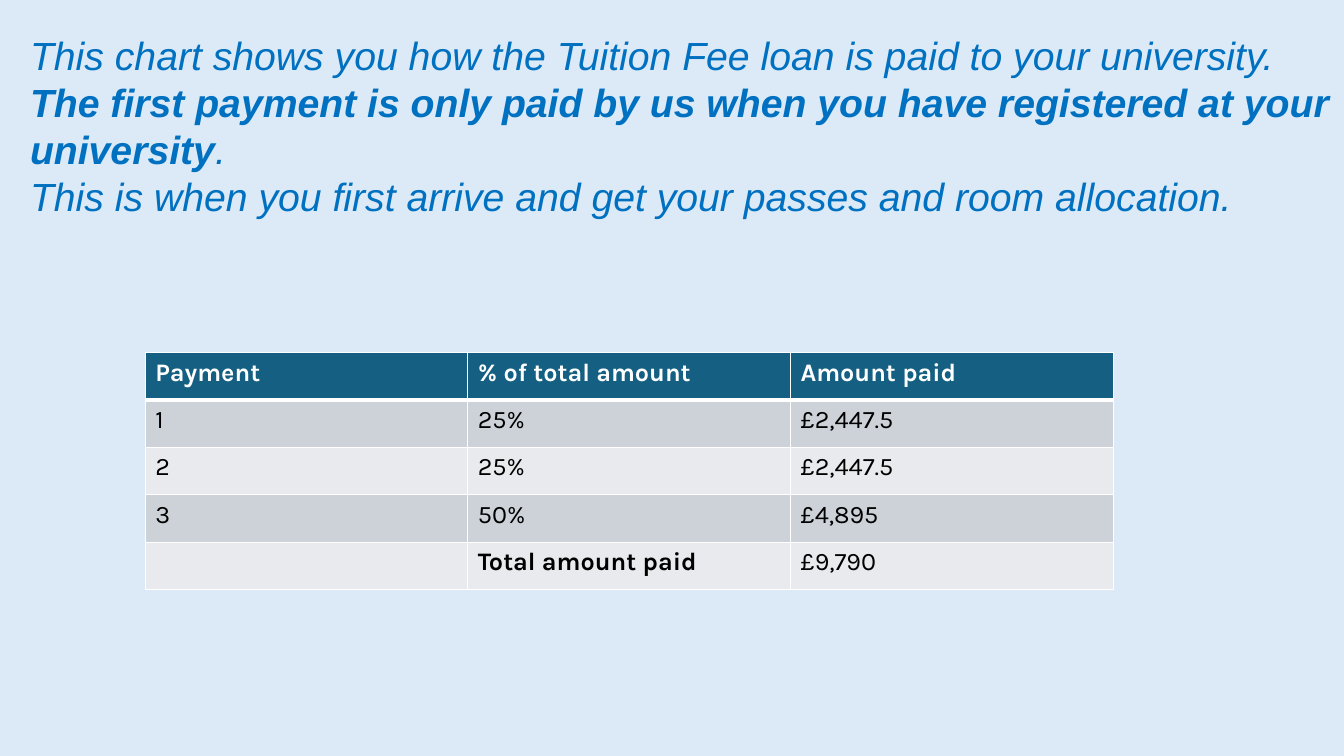
"""Build the slide on how the Tuition Fee loan is paid."""
from lxml.etree import SubElement
from pptx import Presentation
from pptx.dml.color import RGBColor
from pptx.oxml.ns import qn
from pptx.util import Inches, Pt

INTRODUCTION = [
    [("This chart shows you how the Tuition Fee loan is paid to your university.", False)],
    [("The first payment is only paid by us when you have registered at your university", True),
     (".", False)],
    [("This is when you first arrive and get your passes and room allocation.", False)],
]
PAYMENTS = [
    ("Payment", "% of total amount", "Amount paid"),
    ("1", "25%", "£2,447.5"),
    ("2", "25%", "£2,447.5"),
    ("3", "50%", "£4,895"),
    ("", "Total amount paid", "£9,790"),
]
BOLD_LABELS = {*PAYMENTS[0], "Total amount paid"}
COLORS = {
    "background": "DCEAF7", "introduction": "0070C0", "header": "156082",
    "odd": "CCD2D8", "even": "E8EAED", "white": "FFFFFF", "black": "000000",
}
COLUMN_WIDTH, ROW_HEIGHT = 3.2, 0.47


def color(name):
    return RGBColor.from_string(COLORS[name])


def add_text(paragraph, text, *, size, font, fill, bold=False, italic=False):
    run = paragraph.add_run()
    run.text = text
    run.font.size, run.font.name = Pt(size), font
    run.font.bold, run.font.italic = bold, italic
    run.font.color.rgb = color(fill)


def add_borders(cell, widths):
    properties = cell._tc.get_or_add_tcPr()
    for side, width in zip("LRTB", widths):
        line = SubElement(properties, qn(f"a:ln{side}"), w=str(Pt(width)))
        SubElement(SubElement(line, qn("a:solidFill")), qn("a:srgbClr"), val=COLORS["white"])


def add_introduction(slide):
    box = slide.shapes.add_textbox(Inches(0.2), Inches(0.26), Inches(13.13), Inches(1.99))
    frame = box.text_frame
    frame.word_wrap = True
    for index, pieces in enumerate(INTRODUCTION):
        paragraph = frame.add_paragraph() if index else frame.paragraphs[0]
        for text, bold in pieces:
            add_text(paragraph, text, size=28, font="Arial", fill="introduction",
                     bold=bold, italic=True)


def add_payments(slide):
    row_count, column_count = len(PAYMENTS), len(PAYMENTS[0])
    table = slide.shapes.add_table(
        row_count, column_count, Inches(1.44), Inches(3.5),
        Inches(COLUMN_WIDTH * column_count), Inches(ROW_HEIGHT * row_count)).table
    for row, labels in enumerate(PAYMENTS):
        fill = "header" if row == 0 else "odd" if row % 2 else "even"
        for column, label in enumerate(labels):
            cell = table.cell(row, column)
            add_borders(cell, (1, 1, 3 if row == 1 else 1, 3 if row == 0 else 1))
            cell.fill.solid()
            cell.fill.fore_color.rgb = color(fill)
            if label:
                add_text(cell.text_frame.paragraphs[0], label, size=18, font="Karla",
                         fill="black" if row else "white", bold=label in BOLD_LABELS)


def main():
    presentation = Presentation()
    presentation.slide_width, presentation.slide_height = Inches(13.33), Inches(7.5)
    slide = presentation.slides.add_slide(presentation.slide_layouts[6])
    slide.background.fill.solid()
    slide.background.fill.fore_color.rgb = color("background")
    add_introduction(slide)
    add_payments(slide)
    presentation.save("out.pptx")


if __name__ == "__main__":
    main()
